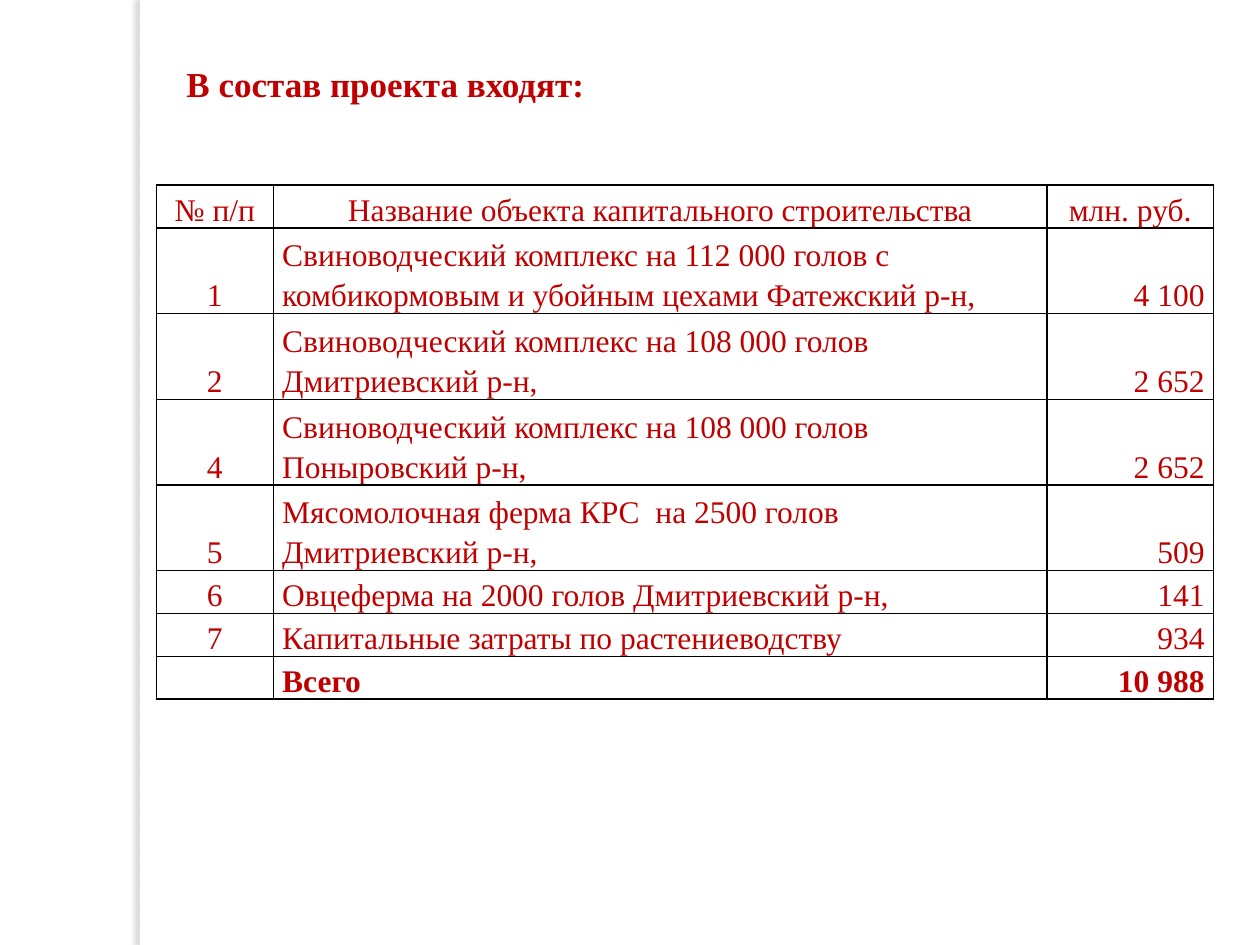
"""Build a slide with a table of the capital construction objects in the project."""
from dataclasses import dataclass

from lxml import etree
from pptx import Presentation
from pptx.dml.color import RGBColor as RGB
from pptx.enum.shapes import MSO_SHAPE as SHAPE
from pptx.enum.text import MSO_ANCHOR as ANCHOR, PP_ALIGN as ALIGN
from pptx.oxml import parse_xml
from pptx.oxml.ns import nsdecls, qn
from pptx.util import Inches, Pt


@dataclass(frozen=True)
class Theme:
    font: str = "Times New Roman"
    text: str = "C00000"
    paper: str = "FFFFFF"
    border: str = "000000"
    shadow: str = "736F63"
    title_size: int = 20
    table_size: int = 18
    border_width: int = 1


theme = Theme()


def write_text(tf, text, size=theme.table_size, bold=False, align=ALIGN.LEFT, spacing=1.0):
    tf.word_wrap = True
    for i, line in enumerate(text.split("\n")):
        p = tf.paragraphs[0] if i == 0 else tf.add_paragraph()
        p.alignment = align
        p.line_spacing = spacing
        r = p.add_run()
        r.text = line
        r.font.name = theme.font
        r.font.size = Pt(size)
        r.font.bold = bold
        r.font.color.rgb = RGB.from_string(theme.text)


def add_borders(cell):
    tc_pr = cell._tc.get_or_add_tcPr()
    for side in ("lnL", "lnR", "lnT", "lnB"):
        ln = etree.SubElement(tc_pr, qn(f"a:{side}"), w=str(Pt(theme.border_width)))
        fill = etree.SubElement(ln, qn("a:solidFill"))
        etree.SubElement(fill, qn("a:srgbClr"), val=theme.border)


prs = Presentation()
prs.slide_width, prs.slide_height = Inches(10), Inches(7.5)
s = prs.slides.add_slide(prs.slide_layouts[5])

strip = s.shapes.add_shape(SHAPE.RECTANGLE, Inches(1.11), 0, Inches(0.08), prs.slide_height)
strip.fill.solid()
strip.fill.fore_color.rgb = RGB.from_string(theme.paper)
strip.line.fill.background()
strip._element.spPr.append(parse_xml(
    f'<a:effectLst {nsdecls("a")}>'
    f'<a:outerShdw blurRad="{Pt(3)}" dist="{Pt(3)}" dir="10800000" algn="tl" rotWithShape="0">'
    f'<a:srgbClr val="{theme.shadow}"><a:alpha val="25000"/></a:srgbClr>'
    '</a:outerShdw></a:effectLst>'))

title = s.shapes.title
title.left, title.top = Inches(1.38), Inches(0.44)
title.width, title.height = Inches(8.11), Inches(0.44)
write_text(title.text_frame, "В состав проекта входят:", size=theme.title_size, bold=True)

rows = [
    ("№ п/п", "Название объекта капитального строительства", "млн. руб."),
    ("1", "Свиноводческий комплекс на 112 000 голов с комбикормовым и убойным цехами "
          "Фатежский р-н,", "4 100"),
    ("2", "Свиноводческий комплекс на 108 000 голов Дмитриевский р-н,", "2 652"),
    ("4", "Свиноводческий комплекс на 108 000 голов\nПоныровский р-н,", "2 652"),
    ("5", "Мясомолочная ферма КРС  на 2500 голов\nДмитриевский р-н,", "509"),
    ("6", "Овцеферма на 2000 голов Дмитриевский р-н,", "141"),
    ("7", "Капитальные затраты по растениеводству", "934"),
    ("", "Всего", "10 988"),
]
widths = (0.93, 6.14, 1.32)
aligns = (ALIGN.CENTER, ALIGN.LEFT, ALIGN.RIGHT)
line_height = 0.34
line_counts = (1, 2, 2, 2, 2, 1, 1, 1)

table = s.shapes.add_table(len(rows), len(widths), Inches(1.24), Inches(1.47),
                           Inches(sum(widths)), Inches(line_height * sum(line_counts))).table
table.first_row = table.horz_banding = False
for column, width in zip(table.columns, widths):
    column.width = Inches(width)

last = len(rows) - 1
for i, (values, count) in enumerate(zip(rows, line_counts)):
    table.rows[i].height = Inches(line_height * count)
    for j, (text, align) in enumerate(zip(values, aligns)):
        cell = table.cell(i, j)
        cell.vertical_anchor = ANCHOR.BOTTOM
        cell.margin_left = cell.margin_right = Inches(0.07)
        cell.margin_top = cell.margin_bottom = 0
        add_borders(cell)
        cell.fill.background()
        write_text(cell.text_frame, text, bold=i == last, spacing=1.15,
                   align=ALIGN.CENTER if i == 0 else align)

prs.save("out.pptx")
